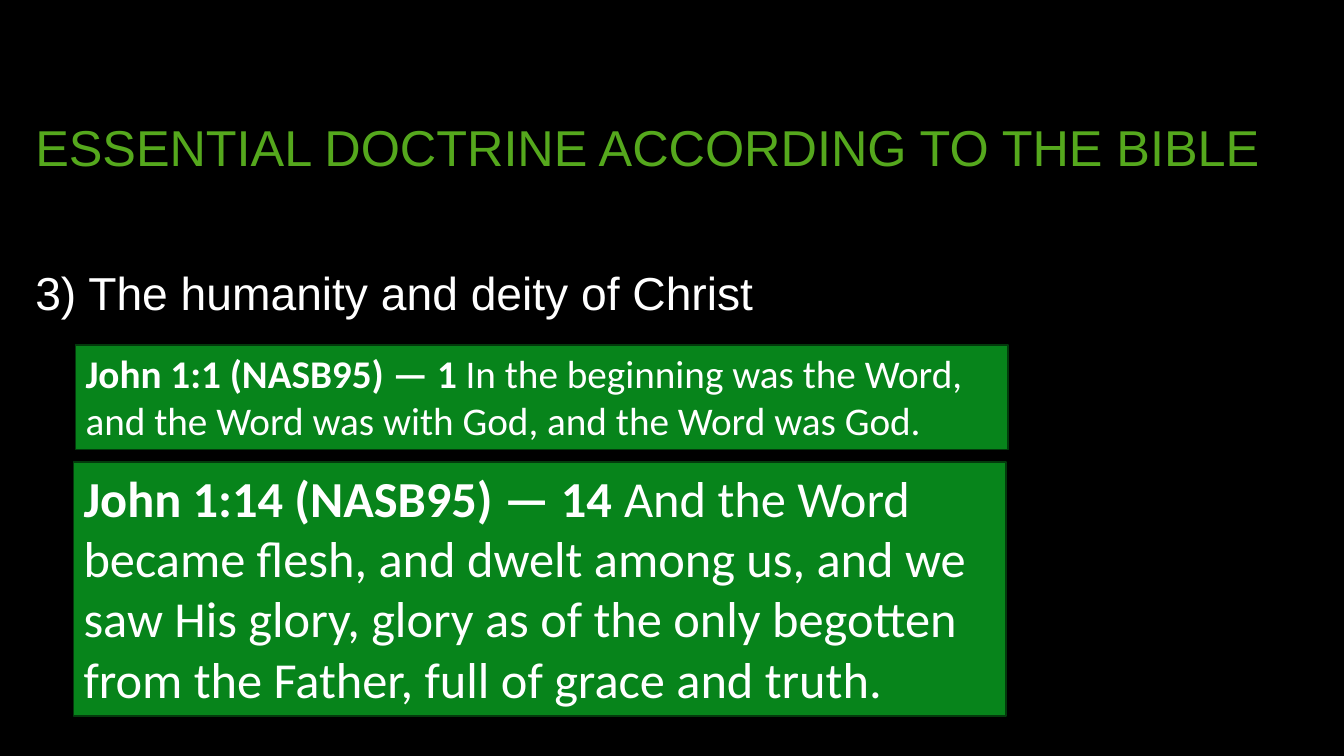
from pptx import Presentation
from pptx.dml.color import RGBColor
from pptx.enum.shapes import MSO_SHAPE as Shape
from pptx.enum.text import MSO_ANCHOR as Anchor, MSO_AUTO_SIZE as Fit, PP_ALIGN as Align
from pptx.oxml.ns import qn
from pptx.util import Inches, Pt
from lxml import etree

# Content
TITLE = "ESSENTIAL DOCTRINE ACCORDING TO THE BIBLE"
POINT = "3) The humanity and deity of Christ"
# reference, verse, text size, (left, top, width, height)
VERSES = [
    ("John 1:14 (NASB95) — 14",
     " And the Word became flesh, and dwelt among us, and we saw His glory, "
     "glory as of the only begotten from the Father, full of grace and truth.",
     36, (0.73, 4.58, 9.25, 2.52)),
    ("John 1:1 (NASB95) — 1",
     " In the beginning was the Word, and the Word was with God, "
     "and the Word was God.",
     28, (0.75, 3.42, 9.25, 1.04)),
]
COLORS = {"back": "000000", "title": "55A81D", "text": "FFFFFF",
          "box": "07841B", "edge": "033A0C"}


def color(key):
    return RGBColor.from_string(COLORS[key])


def style(font, name, size, key, bold=False):
    font.name, font.size, font.bold = name, Pt(size), bold
    font.color.rgb = color(key)


def place(holder, box, text, size, key, gap, anchor):
    holder.left, holder.top, holder.width, holder.height = map(Inches, box)
    frame = holder.text_frame
    frame.text = text
    frame.word_wrap = True
    frame.auto_size = Fit.NONE
    frame.vertical_anchor = anchor
    para = frame.paragraphs[0]
    para.alignment = Align.LEFT
    para.line_spacing = gap
    para.space_before = Pt(0)
    style(para.runs[0].font, "Arial", size, key)
    return para


def add_verse(slide, ref, verse, size, box):
    rect = slide.shapes.add_shape(Shape.RECTANGLE, *map(Inches, box))
    rect.shadow.inherit = False
    rect.fill.solid()
    rect.fill.fore_color.rgb = color("box")
    rect.line.color.rgb = color("edge")
    rect.line.width = Pt(1.25)
    frame = rect.text_frame
    frame.word_wrap = True
    frame.auto_size = Fit.SHAPE_TO_FIT_TEXT
    frame.vertical_anchor = Anchor.TOP
    para = frame.paragraphs[0]
    para.alignment = Align.LEFT
    for text, bold in ((ref, True), (verse, False)):
        run = para.add_run()
        run.text = text
        style(run.font, "Calibri", size, "text", bold)


# Slide and background
deck = Presentation()
deck.slide_width, deck.slide_height = Inches(13.33), Inches(7.5)
slide = deck.slides.add_slide(deck.slide_layouts[1])
slide.background.fill.solid()
slide.background.fill.fore_color.rgb = color("back")

# Title and point
title, body = slide.placeholders
place(title, (0.25, 0.68, 12.9, 1.62), TITLE, 36, "title", 0.9, Anchor.MIDDLE)
point = place(body, (0.25, 2.46, 12.9, 4.88), POINT, 33, "text", 1.2, Anchor.TOP)

# The point has no bullet and no indent
props = point._p.get_or_add_pPr()
props.set("marL", "0")
props.set("indent", "0")
etree.SubElement(props, qn("a:buNone"))

# Verse boxes
for verse in VERSES:
    add_verse(slide, *verse)

deck.save("out.pptx")
